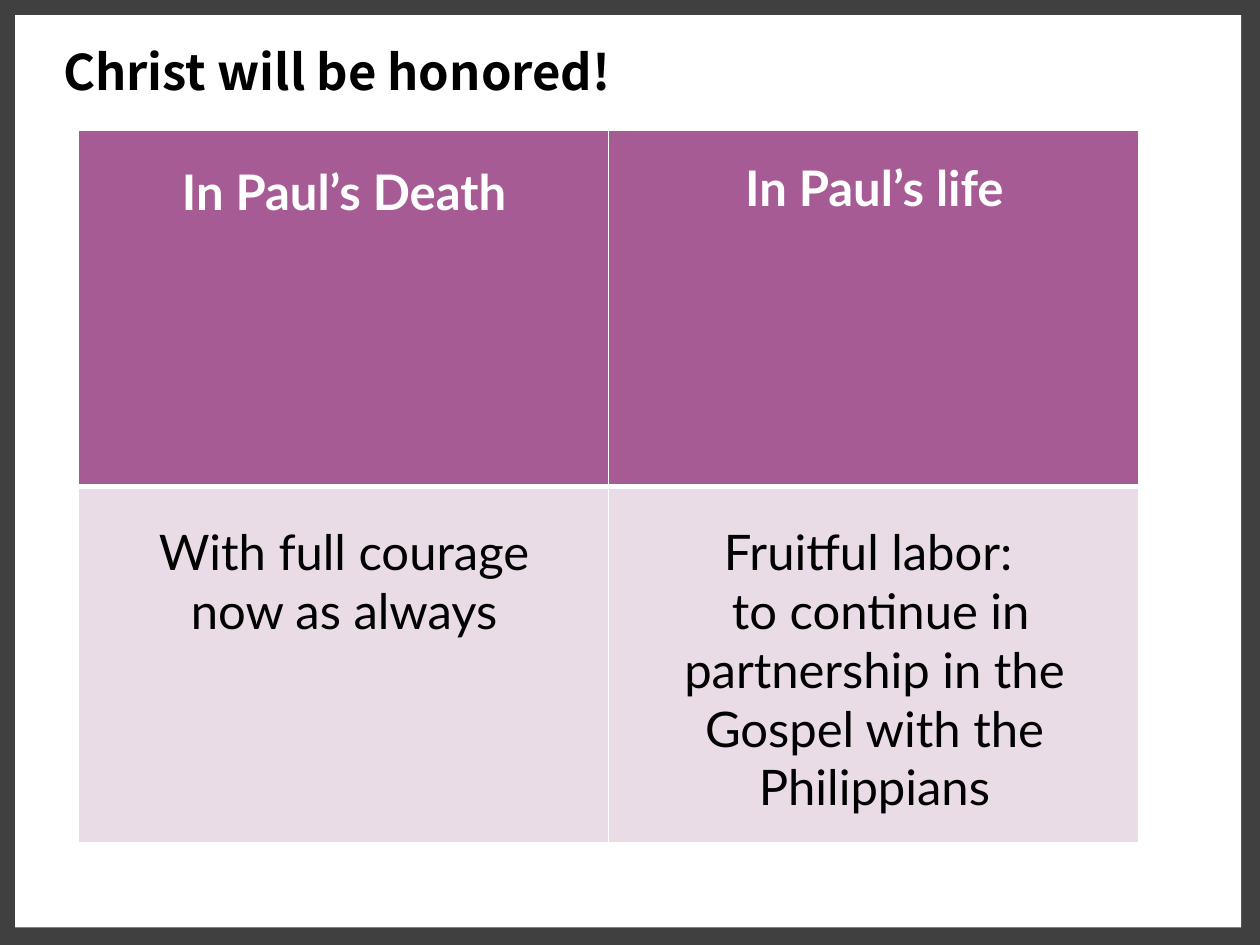
from pptx import Presentation
from pptx.dml.color import RGBColor
from pptx.enum.shapes import MSO_SHAPE as Kind
from pptx.enum.text import MSO_ANCHOR as Anchor, MSO_AUTO_SIZE as Fit, PP_ALIGN as Align
from pptx.oxml.ns import qn
from pptx.util import Inches, Pt
from lxml.etree import SubElement

DARK = RGBColor(0x40, 0x40, 0x40)
WHITE = RGBColor(0xFF, 0xFF, 0xFF)
BLACK = RGBColor(0, 0, 0)
PLUM = RGBColor(0xA7, 0x5B, 0x95)
PALE = RGBColor(0xEA, 0xDC, 0xE6)
LEFT, TOP, COL, ROW = 0.62, 1.03, 4.21, 2.83
HEADS = [(["In Paul’s Death"], 0.20, 0.57), (["In Paul’s life"], 0.17, 1.04)]
CLAIMS = [
    (["With full courage now as always"], 0.23, 1.51),
    (["Fruitful labor: ", " to continue in partnership in the Gospel with the Philippians"], 0.23, 2.46),
]


def write(para, text, font, color, bold=False):
    """Add one styled run to a paragraph."""
    run = para.add_run()
    run.text = text
    run.font.name, run.font.size, run.font.bold = font, Pt(28), bold
    run.font.color.rgb = color


def page(slide):
    """Lay the white page on the dark ground."""
    slide.background.fill.solid()
    slide.background.fill.fore_color.rgb = DARK
    sheet = slide.shapes.add_shape(Kind.RECTANGLE, *map(Inches, (0.12, 0.12, 9.73, 7.24)))
    sheet.shadow.inherit = False
    sheet.fill.solid()
    sheet.fill.fore_color.rgb = WHITE
    sheet.line.fill.background()
    slide.shapes._spTree.insert(2, sheet._element)


def head(slide, text):
    """Place and fill the title."""
    title = slide.shapes.title
    title.left, title.top, title.width, title.height = map(Inches, (0.4, 0.33, 9.25, 0.57))
    frame = title.text_frame
    frame.vertical_anchor, frame.auto_size = Anchor.TOP, Fit.SHAPE_TO_FIT_TEXT
    para = frame.paragraphs[0]
    para.alignment, para.line_spacing = Align.LEFT, 0.9
    write(para, text, "Noto Sans CJK JP", BLACK, True)


def edge(cell, side, width):
    """Draw one white border of a cell."""
    line = SubElement(cell._tc.get_or_add_tcPr(), qn(f"a:ln{side}"), w=str(Pt(width)))
    fill = SubElement(line, qn("a:solidFill"))
    SubElement(fill, qn("a:srgbClr"), val=str(WHITE))


def grid(slide):
    """Add the two by two table of colour fields."""
    size = map(Inches, (LEFT, TOP, 2 * COL, 2 * ROW))
    table = slide.shapes.add_table(2, 2, *size).table
    for row, tint in enumerate((PLUM, PALE)):
        for col in range(2):
            cell = table.cell(row, col)
            for side in "LRTB":
                thick = (row, side) in ((0, "B"), (1, "T"))
                edge(cell, side, 3 if thick else 1)
            cell.fill.solid()
            cell.fill.fore_color.rgb = tint


def note(slide, row, col, lines, drop, height, color):
    """Set centred text over one field of the table."""
    spot = (LEFT + 0.17 + col * COL, TOP + row * ROW + drop, 3.88, height)
    frame = slide.shapes.add_textbox(*map(Inches, spot)).text_frame
    frame.word_wrap = True
    for index, text in enumerate(lines):
        para = frame.add_paragraph() if index else frame.paragraphs[0]
        para.alignment = Align.CENTER
        write(para, text, "Lato", color, row == 0)


def main():
    """Build and save the slide."""
    deck = Presentation()
    deck.slide_width, deck.slide_height = Inches(10), Inches(7.5)
    slide = deck.slides.add_slide(deck.slide_layouts[5])
    page(slide)
    head(slide, "Christ will be honored!")
    grid(slide)
    for row, (items, color) in enumerate(((HEADS, WHITE), (CLAIMS, BLACK))):
        for col, (lines, drop, height) in enumerate(items):
            note(slide, row, col, lines, drop, height, color)
    deck.save("out.pptx")


if __name__ == "__main__":
    main()
